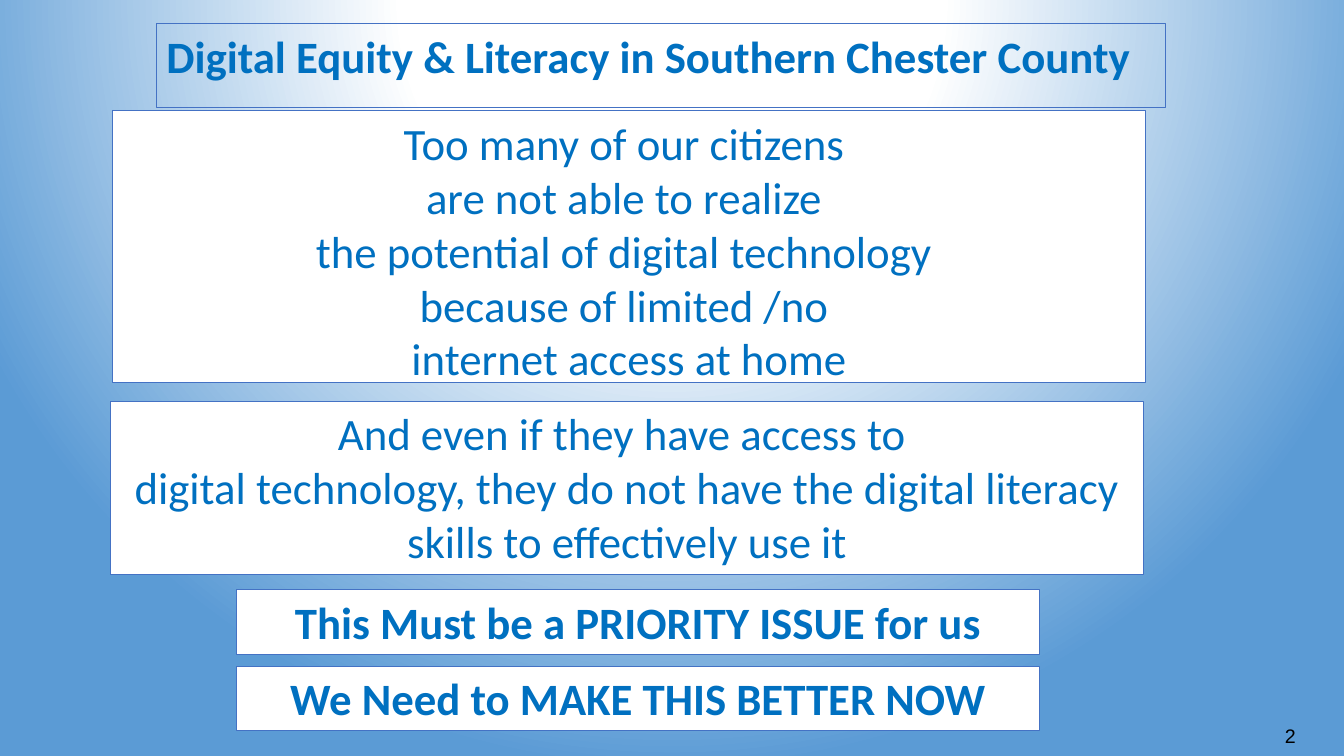
from dataclasses import dataclass

from pptx import Presentation
from pptx.dml.color import RGBColor
from pptx.enum.shapes import MSO_SHAPE
from pptx.enum.text import MSO_ANCHOR, MSO_AUTO_SIZE, PP_ALIGN
from pptx.oxml import parse_xml
from pptx.oxml.ns import nsdecls, qn
from pptx.util import Inches, Pt

SLIDE_WIDTH, SLIDE_HEIGHT = 13.33, 7.5
WHITE, SKY, BLUE, BORDER, BLACK = "FFFFFF", "5B9BD5", "0070C0", "4472C4", "000000"
BANNER_LEFT, BANNER_WIDTH, LINE_BOX_HEIGHT = 2.35, 7.96, 0.64
BANNER_TOP, BANNER_STEP = 5.85, 0.76


@dataclass
class Area:
    left: float
    top: float
    width: float
    height: float

    def lengths(self) -> list:
        return [Inches(value) for value in (self.left, self.top, self.width, self.height)]


@dataclass
class Panel:
    area: Area
    lines: list[str]
    bold: bool = False


def color(value: str) -> RGBColor:
    return RGBColor.from_string(value)


def place(box, area: Area) -> None:
    box.left, box.top, box.width, box.height = area.lengths()


def paint_background(page) -> None:
    """Fill the page with a round glow centred above its top edge."""
    page.background.fill.solid()
    solid = page.element.find(".//" + qn("p:bgPr")).find(qn("a:solidFill"))
    stops = "".join(
        f'<a:gs pos="{share * 1000}"><a:srgbClr val="{value}"/></a:gs>'
        for share, value in ((0, WHITE), (35, WHITE), (100, SKY))
    )
    glow = parse_xml(
        f'<a:gradFill {nsdecls("a")} rotWithShape="1"><a:gsLst>{stops}</a:gsLst>'
        '<a:path path="circle"><a:fillToRect l="50000" t="-80000" r="50000" b="180000"/>'
        "</a:path></a:gradFill>"
    )
    solid.getparent().replace(solid, glow)


def outline(box, filled: bool = True) -> None:
    if filled:
        box.fill.solid()
        box.fill.fore_color.rgb = color(WHITE)
    else:
        box.fill.background()
    box.line.color.rgb = color(BORDER)
    box.line.width = Pt(0.75)


def write(box, lines: list[str], *, size: int = 32, font: str = "Calibri",
          ink: str = BLUE, bold: bool = False, align=PP_ALIGN.CENTER,
          wrap: bool = True) -> None:
    frame = box.text_frame
    frame.word_wrap = wrap
    frame.auto_size = MSO_AUTO_SIZE.SHAPE_TO_FIT_TEXT
    frame.vertical_anchor = MSO_ANCHOR.TOP
    for index, line in enumerate(lines):
        para = frame.paragraphs[0] if index == 0 else frame.add_paragraph()
        properties = para._p.get_or_add_pPr()
        properties.set("marL", "0")
        properties.set("indent", "0")
        properties.append(parse_xml(f'<a:buNone {nsdecls("a")}/>'))
        para.alignment = align
        para.space_before = para.space_after = Pt(0)
        span = para.add_run()
        span.text = line
        span.font.size, span.font.name, span.font.bold = Pt(size), font, bold
        span.font.color.rgb = color(ink)


def add_panel(page, panel: Panel) -> None:
    box = page.shapes.add_shape(MSO_SHAPE.RECTANGLE, *panel.area.lengths())
    box.shadow.inherit = False
    outline(box)
    write(box, panel.lines, bold=panel.bold)


PROBLEM = [
    "Too many of our citizens ",
    "are not able to realize ",
    "the potential of digital technology ",
    "because of limited /no ",
    "internet access at home",
]
LITERACY = [
    "And even if they have access to ",
    "digital technology, they do not have the digital literacy skills to effectively use it",
]
BANNERS = ["This Must be a PRIORITY ISSUE for us", "We Need to MAKE THIS BETTER NOW"]


def main() -> None:
    deck = Presentation()
    deck.slide_width, deck.slide_height = Inches(SLIDE_WIDTH), Inches(SLIDE_HEIGHT)
    page = deck.slides.add_slide(deck.slide_layouts[1])
    paint_background(page)

    # Title and main statement
    title, body = page.shapes.title, page.placeholders[1]
    place(title, Area(1.55, 0.23, 10.01, LINE_BOX_HEIGHT))
    outline(title, filled=False)
    write(title, ["Digital Equity & Literacy in Southern Chester County"],
          bold=True, align=PP_ALIGN.LEFT, wrap=False)
    place(body, Area(1.12, 1.1, 10.24, 2.79))
    outline(body)
    write(body, PROBLEM)

    # Literacy statement and the two calls to action
    panels = [Panel(Area(1.1, 3.98, 10.24, 1.72), LITERACY)]
    for row, text in enumerate(BANNERS):
        area = Area(BANNER_LEFT, BANNER_TOP + row * BANNER_STEP, BANNER_WIDTH, LINE_BOX_HEIGHT)
        panels.append(Panel(area, [text], bold=True))
    for panel in panels:
        add_panel(page, panel)

    # Page number
    number = page.shapes.add_textbox(*Area(11.02, 7.13, 1.93, 0.34).lengths())
    write(number, ["2"], size=14, font="Arial", ink=BLACK, align=PP_ALIGN.RIGHT)

    deck.save("out.pptx")


if __name__ == "__main__":
    main()
